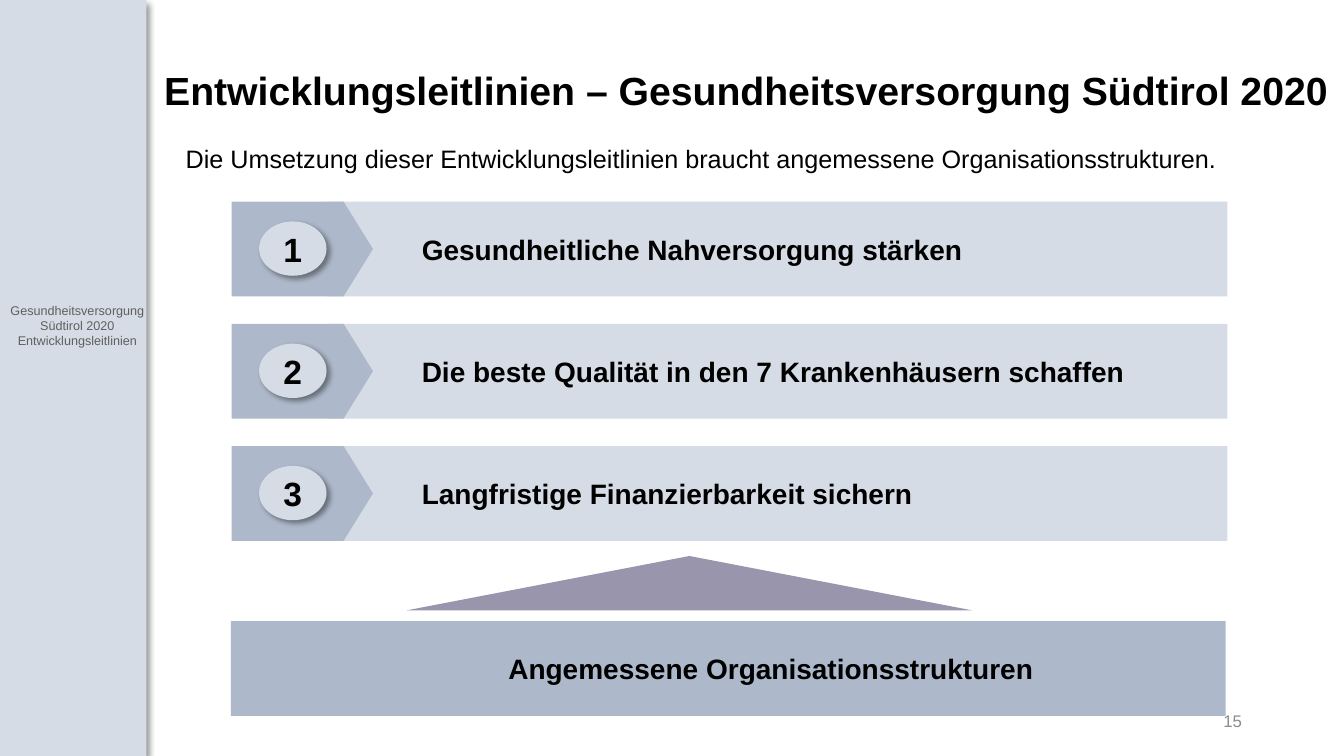
from dataclasses import dataclass

from lxml.etree import SubElement
from pptx import Presentation
from pptx.dml.color import RGBColor
from pptx.enum.shapes import MSO_SHAPE
from pptx.enum.text import MSO_ANCHOR, PP_ALIGN
from pptx.oxml.ns import qn
from pptx.util import Cm, Pt

BLACK = RGBColor(0x00, 0x00, 0x00)
SLATE = RGBColor(0xAD, 0xB9, 0xCA)
PALE = RGBColor(0xD6, 0xDC, 0xE5)
MAUVE = RGBColor(0x98, 0x95, 0xAD)
DARK_GREY = RGBColor(0x5F, 0x5F, 0x5F)
GREY = RGBColor(0x8C, 0x8C, 0x8C)

GUIDELINES = [
    "Gesundheitliche Nahversorgung stärken",
    "Die beste Qualität in den 7 Krankenhäusern schaffen",
    "Langfristige Finanzierbarkeit sichern",
]
ROW_PITCH = 3.08
BAR_FORMAT = {"margin_left": Cm(2.4), "vertical_anchor": MSO_ANCHOR.MIDDLE, "word_wrap": True}


@dataclass
class Box:
    """Position and size in centimetres."""
    left: float
    top: float
    width: float
    height: float

    def inner(self, dx, dy, width, height):
        """Return a box placed relative to this one."""
        return Box(self.left + dx, self.top + dy, width, height)

    def lengths(self):
        """Return left, top, width and height as lengths."""
        return [Cm(n) for n in (self.left, self.top, self.width, self.height)]


def write(holder, lines, size, color=BLACK, bold=False, align=PP_ALIGN.LEFT, spacing=None, frame_format=None):
    """Fill the text frame of a shape with equally formatted paragraphs."""
    frame = holder.text_frame
    frame_format = frame_format or {"word_wrap": True, "vertical_anchor": MSO_ANCHOR.MIDDLE}
    for name, value in frame_format.items():
        setattr(frame, name, value)
    for index, line in enumerate(lines):
        paragraph = frame.add_paragraph() if index else frame.paragraphs[0]
        paragraph.text = line
        paragraph.alignment = align
        paragraph.line_spacing = spacing
        for name, value in {"name": "Arial", "size": Pt(size), "bold": bold}.items():
            setattr(paragraph.font, name, value)
        paragraph.font.color.rgb = color


def add_filled(slide, kind, box, color, point=None, shadow=False):
    """Add a borderless shape, with an optional point depth and soft shadow."""
    shape = slide.shapes.add_shape(kind, *box.lengths())
    shape.fill.solid()
    shape.fill.fore_color.rgb = color
    shape.line.fill.background()
    shape.shadow.inherit = False
    if point is not None:
        shape.adjustments[0] = point
    if shadow:
        effects = shape._element.spPr.find(qn("a:effectLst"))
        outer = SubElement(effects, qn("a:outerShdw"), blurRad=str(Pt(4)), dist=str(Pt(3)),
                           dir="2700000", algn="tl", rotWithShape="0")
        black = SubElement(outer, qn("a:srgbClr"), val="000000")
        SubElement(black, qn("a:alpha"), val="40000")
    return shape


def add_sidebar(slide, box):
    """Draw the side band with the name of the programme."""
    add_filled(slide, MSO_SHAPE.RECTANGLE, box, PALE, shadow=True)
    programme = slide.shapes.add_textbox(*box.inner(0, 7.5, 3.9, 1.78).lengths())
    write(programme, ["Gesundheitsversorgung Südtirol 2020", "Entwicklungsleitlinien"], 9,
          DARK_GREY, align=PP_ALIGN.CENTER, frame_format={"word_wrap": True})


def add_heading(slide, box):
    """Write the title and the sentence below it."""
    title = slide.shapes.add_textbox(*box.inner(0, 0, box.width, 2.62).lengths())
    write(title, ["Entwicklungsleitlinien – Gesundheitsversorgung Südtirol 2020"], 28, bold=True, spacing=0.9)
    statement = slide.shapes.add_textbox(*box.inner(0.54, 1.73, 27.81, 2.51).lengths())
    write(statement, ["Die Umsetzung dieser Entwicklungsleitlinien braucht "
                      "angemessene Organisationsstrukturen."], 18)


def add_guideline(slide, box, number, guideline):
    """Draw one numbered guideline as a bar with an arrow tab."""
    bar = add_filled(slide, MSO_SHAPE.PENTAGON, box.inner(2.39, 0, box.width - 2.39, box.height), PALE, 0)
    write(bar, [guideline], 20, bold=True, frame_format=BAR_FORMAT)
    add_filled(slide, MSO_SHAPE.PENTAGON, box.inner(0, 0, 3.56, box.height), SLATE, 0.31)
    badge = add_filled(slide, MSO_SHAPE.OVAL, box.inner(0.69, 0.5, 1.7, 1.37), PALE, shadow=True)
    write(badge, [str(number)], 24, bold=True, align=PP_ALIGN.CENTER)


def add_foundation(slide, box):
    """Draw the base bar and the wide point rising above it."""
    base = add_filled(slide, MSO_SHAPE.PENTAGON, box, SLATE, 0)
    write(base, ["Angemessene Organisationsstrukturen"], 20, bold=True,
          align=PP_ALIGN.CENTER, frame_format=BAR_FORMAT)
    point = add_filled(slide, MSO_SHAPE.PENTAGON, box.inner(10.87, -8.08, 1.37, 14.25), MAUVE, 1)
    point.rotation = 270


def add_page_number(slide, box):
    """Write the page number at the right of its box."""
    number = slide.shapes.add_textbox(*box.lengths())
    write(number, ["15"], 12, GREY, align=PP_ALIGN.RIGHT)


def main():
    """Build and save the slide."""
    deck = Presentation()
    deck.slide_width, deck.slide_height = Cm(33.87), Cm(19.05)
    slide = deck.slides.add_slide(deck.slide_layouts[6])
    add_sidebar(slide, Box(0, 0, 3.69, 19.05))
    add_page_number(slide, Box(23.93, 17.65, 7.62, 1.02))
    add_heading(slide, Box(3.89, 1.02, 30, 4.24))
    for index, guideline in enumerate(GUIDELINES):
        add_guideline(slide, Box(5.84, 5.08 + index * ROW_PITCH, 25.09, 2.39), index + 1, guideline)
    add_foundation(slide, Box(5.82, 15.65, 25.07, 2.39))
    deck.save("out.pptx")


if __name__ == "__main__":
    main()
